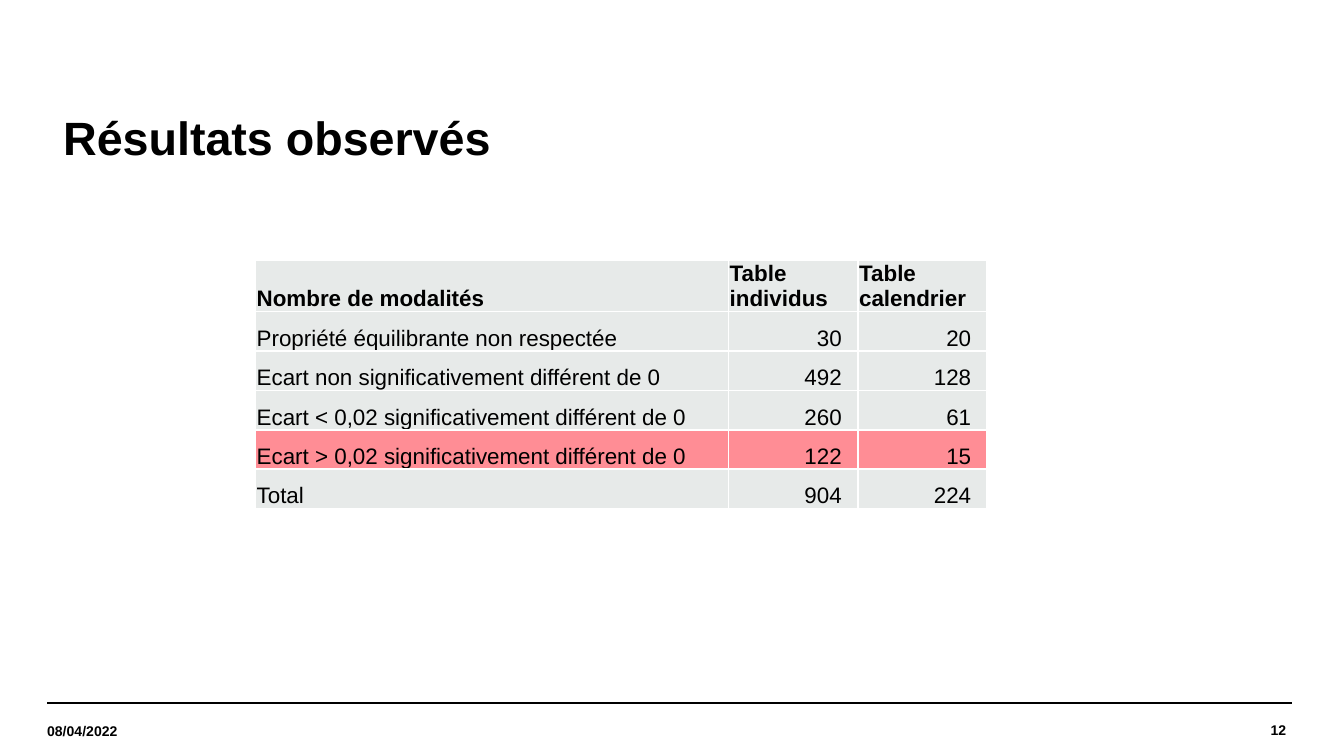
from dataclasses import dataclass

from lxml.etree import SubElement
from pptx import Presentation
from pptx.dml.color import RGBColor
from pptx.enum.shapes import MSO_CONNECTOR
from pptx.enum.text import MSO_ANCHOR, MSO_AUTO_SIZE, PP_ALIGN
from pptx.oxml import parse_xml
from pptx.oxml.ns import nsdecls, qn
from pptx.util import Pt


@dataclass(frozen=True)
class Theme:
    font: str = "Arial"
    ink: str = "000000"
    paper: str = "FFFFFF"
    cell: str = "E7EAE9"
    alert: str = "FF8D95"
    title: float = 25
    body: float = 12
    footer: float = 7.5
    rule: float = 0.8
    border: float = 1


class Deck:
    """Builds slide elements in one theme, with lengths in px at 300 px to the inch."""

    PX = 3048

    def __init__(self, width, height, theme):
        self.theme = theme
        self.prs = Presentation()
        self.prs.slide_width, self.prs.slide_height = self.emu(width, height)
        self.s = self.prs.slides.add_slide(self.prs.slide_layouts[5])
        self.s.background.fill.solid()
        self.s.background.fill.fore_color.rgb = RGBColor.from_string(theme.paper)

    def emu(self, *lengths):
        return [length * self.PX for length in lengths]

    def apply(self, target, values):
        for name, value in values.items():
            setattr(target, name, value)

    def add_text(self, tf, text, size, bold=True, align=PP_ALIGN.LEFT, spacing=1.0):
        p = tf.paragraphs[0]
        self.apply(p, {"alignment": align, "line_spacing": spacing})
        r = p.add_run()
        r.text = text
        self.apply(r.font, {"name": self.theme.font, "size": Pt(size), "bold": bold})
        r.font.color.rgb = RGBColor.from_string(self.theme.ink)

    def frame(self, tf, margins):
        sides = ("margin_left", "margin_top", "margin_right", "margin_bottom")
        self.apply(tf, dict(zip(sides, self.emu(*margins))))
        self.apply(tf, {"word_wrap": True, "auto_size": MSO_AUTO_SIZE.NONE,
                        "vertical_anchor": MSO_ANCHOR.MIDDLE})

    def title(self, text, box):
        sp = self.s.shapes.title
        self.apply(sp, dict(zip(("left", "top", "width", "height"), self.emu(*box))))
        self.frame(sp.text_frame, (36, 15, 30, 15))
        self.add_text(sp.text_frame, text, self.theme.title, spacing=0.9)

    def footer(self, text, box, align=PP_ALIGN.LEFT):
        tf = self.s.shapes.add_textbox(*self.emu(*box)).text_frame
        self.frame(tf, (0, 0, 0, 0))
        self.add_text(tf, text, self.theme.footer, align=align)

    def rule(self, left, right, y):
        line = self.s.shapes.add_connector(MSO_CONNECTOR.STRAIGHT, *self.emu(left, y, right, y))
        line.line.color.rgb = RGBColor.from_string(self.theme.ink)
        line.line.width = Pt(self.theme.rule)
        SubElement(line._element.spPr, qn("a:effectLst"))

    def borders(self, cell):
        tcPr = cell._tc.get_or_add_tcPr()
        for i, side in enumerate(("lnL", "lnR", "lnT", "lnB")):
            tcPr.insert(i, parse_xml(
                f'<a:{side} {nsdecls("a")} w="{Pt(self.theme.border)}"><a:solidFill>'
                f'<a:srgbClr val="{self.theme.paper}"/></a:solidFill></a:{side}>'))

    def table(self, left, top, widths, heights, rows, alert_row):
        box = self.emu(left, top, sum(widths), sum(heights))
        table = self.s.shapes.add_table(len(rows), len(widths), *box).table
        self.apply(table, {"first_row": False, "horz_banding": False})
        for column, width in zip(table.columns, self.emu(*widths)):
            column.width = width
        for row, height in zip(table.rows, self.emu(*heights)):
            row.height = height
        for i, values in enumerate(rows):
            for j, text in enumerate(values):
                cell, number = table.cell(i, j), i > 0 and j > 0
                side, wide = self.emu(3, 36)
                self.apply(cell, {"margin_left": side, "margin_top": side,
                                  "margin_right": wide if number else side, "margin_bottom": 0,
                                  "vertical_anchor": MSO_ANCHOR.BOTTOM})
                cell.fill.solid()
                fill = self.theme.alert if i == alert_row else self.theme.cell
                cell.fill.fore_color.rgb = RGBColor.from_string(fill)
                self.borders(cell)
                align = PP_ALIGN.RIGHT if number else PP_ALIGN.LEFT
                self.add_text(cell.text_frame, text, self.theme.body, bold=i == 0, align=align)


def main():
    rows = [
        ("Nombre de modalités", "Table individus", "Table calendrier"),
        ("Propriété équilibrante non respectée", "30", "20"),
        ("Ecart non significativement différent de 0", "492", "128"),
        ("Ecart < 0,02 significativement différent de 0", "260", "61"),
        ("Ecart > 0,02 significativement différent de 0", "122", "15"),
        ("Total", "904", "224"),
    ]
    deck = Deck(3000, 1687, Theme())
    for left in (105, 117):
        deck.rule(left, left + 2766, 1569)
    deck.footer("12", (2427, 1570, 444, 117), PP_ALIGN.RIGHT)
    deck.footer("08/04/2022", (105, 1575, 384, 114))
    deck.title("Résultats observés", (105, 225, 2763, 177))
    deck.table(570, 580, (1056, 289, 289), [113] + [88] * 5, rows, alert_row=4)
    deck.prs.save("out.pptx")


if __name__ == "__main__":
    main()
